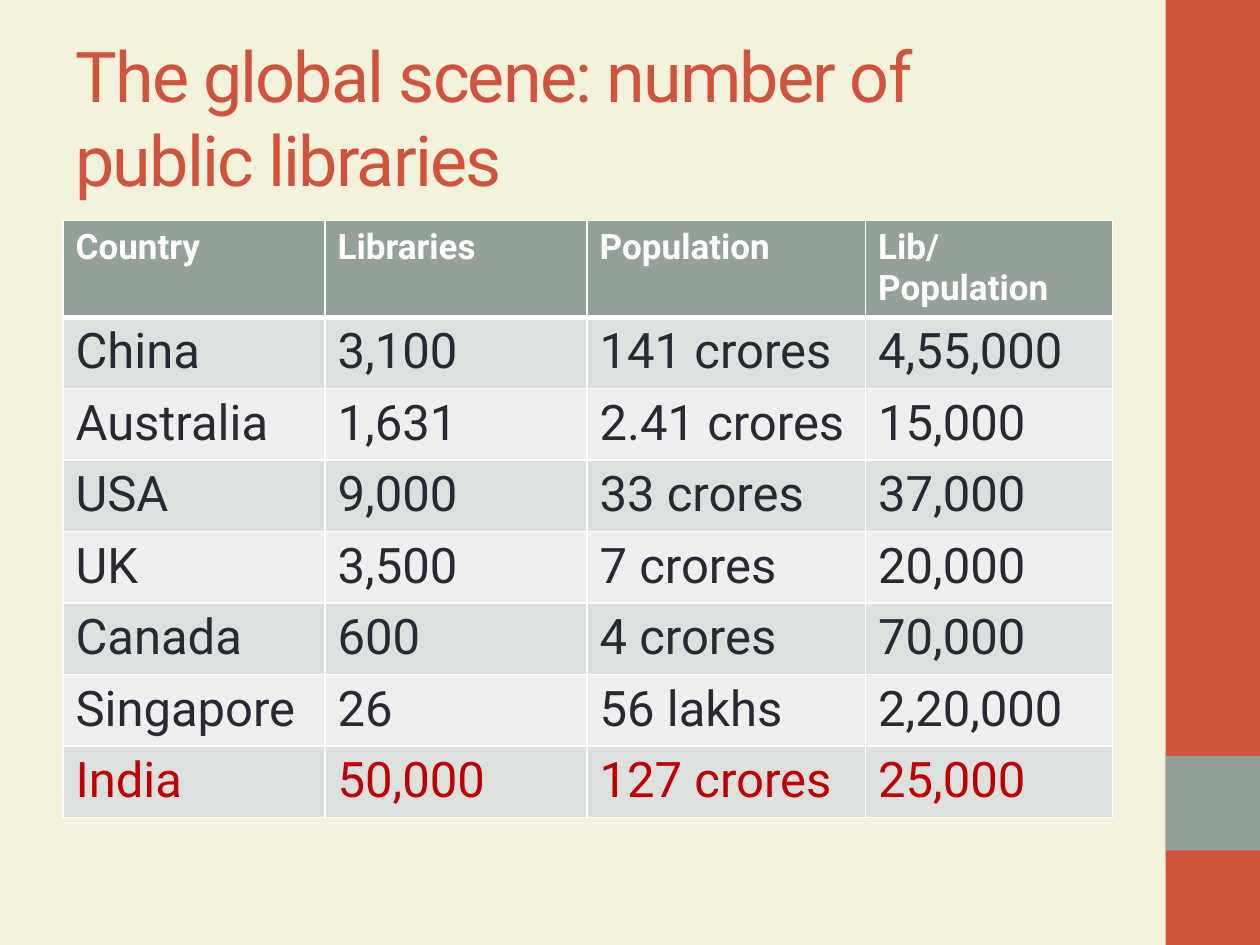
from pptx import Presentation
from pptx import util as u
from pptx.dml.color import RGBColor
from pptx.enum import shapes, text
from pptx.oxml import parse_xml
from pptx.oxml.ns import nsdecls

Inches, Pt = u.Inches, u.Pt
FONT = "Roboto"
COLORS = {
    "background": "F3F2DC",
    "red": "D2533C",
    "sage": "93A299",
    "white": "FFFFFF",
    "ink": "292934",
    "highlight": "C00000",
    "band_dark": "DCE0DE",
    "band_light": "EEF0EF",
}
COLUMN_WIDTHS = [2.08, 2.08, 2.21, 1.96]
HEADER_HEIGHT, ROW_HEIGHT = 0.75, 0.55
LIBRARY_ROWS = [
    ["Country", "Libraries", "Population", "Lib/Population"],
    ["China", "3,100", "141 crores", "4,55,000"],
    ["Australia", "1,631", "2.41 crores", "15,000"],
    ["USA", "9,000", "33 crores", "37,000"],
    ["UK", "3,500", "7 crores", "20,000"],
    ["Canada", "600", "4 crores", "70,000"],
    ["Singapore", "26", "56 lakhs", "2,20,000"],
    ["India", "50,000", "127 crores", "25,000"],
]


def rgb(name):
    return RGBColor.from_string(COLORS[name])


def set_font(paragraph, size, color, bold=False):
    font = paragraph.font
    font.name, font.size, font.bold = FONT, Pt(size), bold
    font.color.rgb = rgb(color)


def add_block(slide, left, top, width, height, color):
    block = slide.shapes.add_shape(
        shapes.MSO_SHAPE.RECTANGLE,
        Inches(left), Inches(top), Inches(width), Inches(height))
    block.shadow.inherit = False
    block.fill.solid()
    block.fill.fore_color.rgb = rgb(color)
    block.line.fill.background()


def add_title(slide, wording):
    title = slide.shapes.add_textbox(
        Inches(0.5), Inches(0.3), Inches(8.33), Inches(1.25))
    frame = title.text_frame
    frame.word_wrap = True
    frame.vertical_anchor = text.MSO_ANCHOR.MIDDLE
    heading = frame.paragraphs[0]
    run = heading.add_run()
    run.text = wording
    run._r.get_or_add_rPr().set("spc", "-100")
    set_font(heading, 40, "red")


def set_borders(cell, widths):
    """Draw white borders; widths maps each side (L, R, T, B) to points."""
    properties = cell._tc.get_or_add_tcPr()
    for position, (side, width) in enumerate(widths.items()):
        border = parse_xml(
            f'<a:ln{side} {nsdecls("a")} w="{Pt(width)}"><a:solidFill>'
            f'<a:srgbClr val="{COLORS["white"]}"/></a:solidFill></a:ln{side}>')
        properties.insert(position, border)


def fill_cell(cell, wording, row):
    is_header = row == 0
    cell.text = wording
    paragraph = cell.text_frame.paragraphs[0]
    if is_header:
        fill = "sage"
        set_font(paragraph, 20, "white", bold=True)
    else:
        fill = "band_dark" if row % 2 else "band_light"
        is_last = row == len(LIBRARY_ROWS) - 1
        set_font(paragraph, 28, "highlight" if is_last else "ink")
    cell.fill.solid()
    cell.fill.fore_color.rgb = rgb(fill)
    # A thicker rule separates the header from the body
    set_borders(cell, {"L": 1, "R": 1, "T": 3 if row == 1 else 1,
                       "B": 3 if is_header else 1})


def add_library_table(slide):
    height = HEADER_HEIGHT + ROW_HEIGHT * (len(LIBRARY_ROWS) - 1)
    table = slide.shapes.add_table(
        len(LIBRARY_ROWS), len(COLUMN_WIDTHS), Inches(0.5), Inches(1.75),
        Inches(sum(COLUMN_WIDTHS)), Inches(height)).table
    for column, width in zip(table.columns, COLUMN_WIDTHS):
        column.width = Inches(width)
    for row, values in enumerate(LIBRARY_ROWS):
        table.rows[row].height = Inches(ROW_HEIGHT if row else HEADER_HEIGHT)
        for column, wording in enumerate(values):
            fill_cell(table.cell(row, column), wording, row)


def main():
    deck = Presentation()
    deck.slide_width, deck.slide_height = Inches(10), Inches(7.5)
    slide = deck.slides.add_slide(deck.slide_layouts[6])
    slide.background.fill.solid()
    slide.background.fill.fore_color.rgb = rgb("background")

    # Side band with its accent square
    add_block(slide, 9.25, 0, 0.75, 7.5, "red")
    add_block(slide, 9.25, 6, 0.75, 0.75, "sage")

    # Title and table
    add_title(slide, "The global scene: number of public libraries")
    add_library_table(slide)

    deck.save("out.pptx")


if __name__ == "__main__":
    main()
